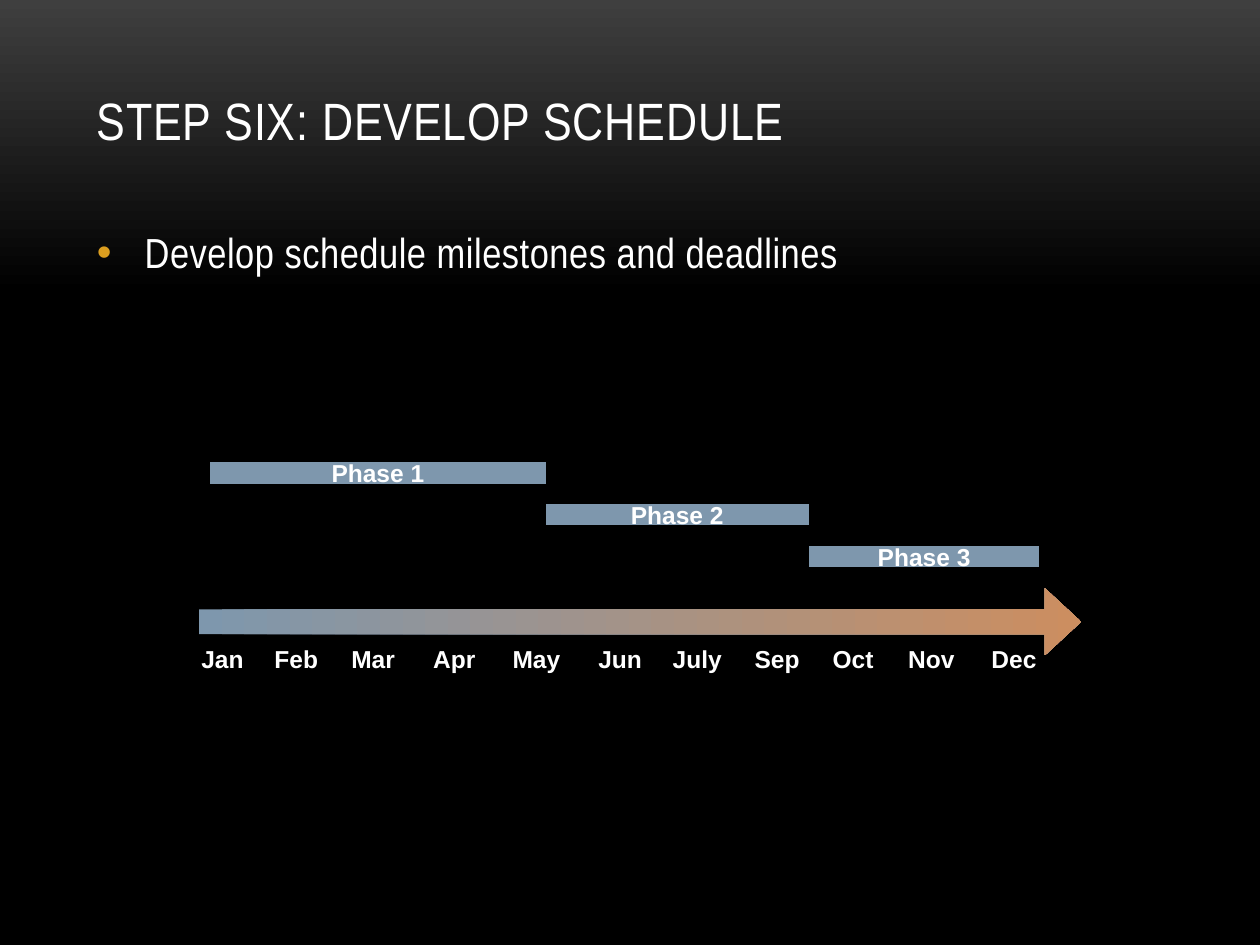
"""Build the schedule slide: three phases above a timeline of months."""
from lxml import etree
from pptx import Presentation
from pptx.dml.color import RGBColor
from pptx.enum.shapes import MSO_SHAPE
from pptx.enum.text import MSO_ANCHOR, MSO_AUTO_SIZE, PP_ALIGN
from pptx.oxml.ns import qn
from pptx.util import Inches, Pt

RIGHT_ARROW, PROCESS = MSO_SHAPE.RIGHT_ARROW, MSO_SHAPE.FLOWCHART_PROCESS
TOP, MIDDLE, BOTTOM = MSO_ANCHOR.TOP, MSO_ANCHOR.MIDDLE, MSO_ANCHOR.BOTTOM
LEFT, CENTER = PP_ALIGN.LEFT, PP_ALIGN.CENTER
NO_FIT, GROW = MSO_AUTO_SIZE.NONE, MSO_AUTO_SIZE.SHAPE_TO_FIT_TEXT

TITLE = "STEP SIX: DEVELOP SCHEDULE"
BULLET = "Develop schedule milestones and deadlines"
PHASES = [("Phase 1", 1.67, 4.33), ("Phase 2", 4.33, 6.42), ("Phase 3", 6.42, 8.25)]
MONTHS = [
    ("Jan", 1.5, 0.56), ("Feb", 2.08, 0.57), ("Mar", 2.69, 0.57), ("Apr", 3.34, 0.56),
    ("May", 3.97, 0.6), ("Jun", 4.65, 0.57), ("July", 5.24, 0.61), ("Sep", 5.89, 0.58),
    ("Oct", 6.51, 0.55), ("Nov", 7.11, 0.59), ("Dec", 7.77, 0.58),
]

THEME = {
    "text": "FFFFFF",
    "bullet": "DC9E1F",
    "phase": "7E97AD",
    "backdrop": [(0, "3F3F3F"), (31, "000000"), (100, "000000")],
    "timeline": [(0, "7E97AD"), (100, "CC8E60")],
    "title": {"name": "Arial Narrow", "size": Pt(30)},
    "body": {"name": "Arial Narrow", "size": Pt(24)},
    "label": {"name": "Arial", "size": Pt(14), "bold": True},
}
PHASE_TOP, PHASE_STEP, PHASE_HEIGHT = 3.67, 0.33, 0.17
MONTH_TOP, MONTH_HEIGHT = 5.06, 0.33
HANGING = Inches(0.38)


def box(left, top, width, height):
    return [Inches(length) for length in (left, top, width, height)]


def set_gradient(fill, element, stops, angle):
    fill.gradient()
    fill.gradient_angle = angle
    stop_list = next(element.iter(qn("a:gsLst")))
    for stop in list(stop_list):
        stop_list.remove(stop)
    for percent, color in stops:
        stop = etree.SubElement(stop_list, qn("a:gs"), pos=str(percent * 1000))
        etree.SubElement(stop, qn("a:srgbClr"), val=color)


def write(shape, text, style, align=LEFT, spacing=0, **frame_format):
    frame = shape.text_frame
    for name, value in frame_format.items():
        setattr(frame, name, value)
    paragraph = frame.paragraphs[0]
    paragraph.alignment = align
    run = paragraph.add_run()
    run.text = text
    for name, value in THEME[style].items():
        setattr(run.font, name, value)
    run.font.color.rgb = RGBColor.from_string(THEME["text"])
    if spacing:
        run._r.get_or_add_rPr().set("spc", str(spacing))
    return paragraph


def add_bullet(paragraph):
    paragraph.space_after = Pt(6)
    properties = paragraph._p.get_or_add_pPr()
    properties.set("marL", str(HANGING))
    properties.set("indent", str(-HANGING))
    bullet_color = etree.SubElement(properties, qn("a:buClr"))
    etree.SubElement(bullet_color, qn("a:srgbClr"), val=THEME["bullet"])
    etree.SubElement(properties, qn("a:buFont"), typeface="Arial")
    etree.SubElement(properties, qn("a:buChar"), char="•")


def add_plain_shape(shapes, preset, place):
    shape = shapes.add_shape(preset, *place)
    shape.shadow.inherit = False
    shape.line.fill.background()
    return shape


def add_schedule(shapes):
    timeline = add_plain_shape(shapes, RIGHT_ARROW, box(1.58, 4.67, 7, 0.53))
    timeline.adjustments[0], timeline.adjustments[1] = 0.37, 0.54
    set_gradient(timeline.fill, timeline.element, THEME["timeline"], 0)

    for month, left, width in MONTHS:
        label = shapes.add_textbox(*box(left, MONTH_TOP, width, MONTH_HEIGHT))
        write(label, month, "label", word_wrap=False, auto_size=GROW)

    for row, (phase, start, end) in enumerate(PHASES):
        place = box(start, PHASE_TOP + row * PHASE_STEP, end - start, PHASE_HEIGHT)
        bar = add_plain_shape(shapes, PROCESS, place)
        bar.fill.solid()
        bar.fill.fore_color.rgb = RGBColor.from_string(THEME["phase"])
        write(bar, phase, "label", CENTER, word_wrap=False, vertical_anchor=MIDDLE)


def main():
    deck = Presentation()
    deck.slide_width, deck.slide_height = Inches(10), Inches(7.5)
    slide = deck.slides.add_slide(deck.slide_layouts[6])
    set_gradient(slide.background.fill, slide.element, THEME["backdrop"], 270)

    wrapped = {"word_wrap": True, "auto_size": NO_FIT}
    title = slide.shapes.add_textbox(*box(0.67, 0.3, 8.67, 0.95))
    write(title, TITLE, "title", spacing=50, vertical_anchor=BOTTOM, **wrapped)
    body = slide.shapes.add_textbox(*box(0.67, 1.75, 8.67, 4.5))
    add_bullet(write(body, BULLET, "body", spacing=30, vertical_anchor=TOP, **wrapped))

    add_schedule(slide.shapes.add_group_shape().shapes)
    deck.save("out.pptx")


if __name__ == "__main__":
    main()
